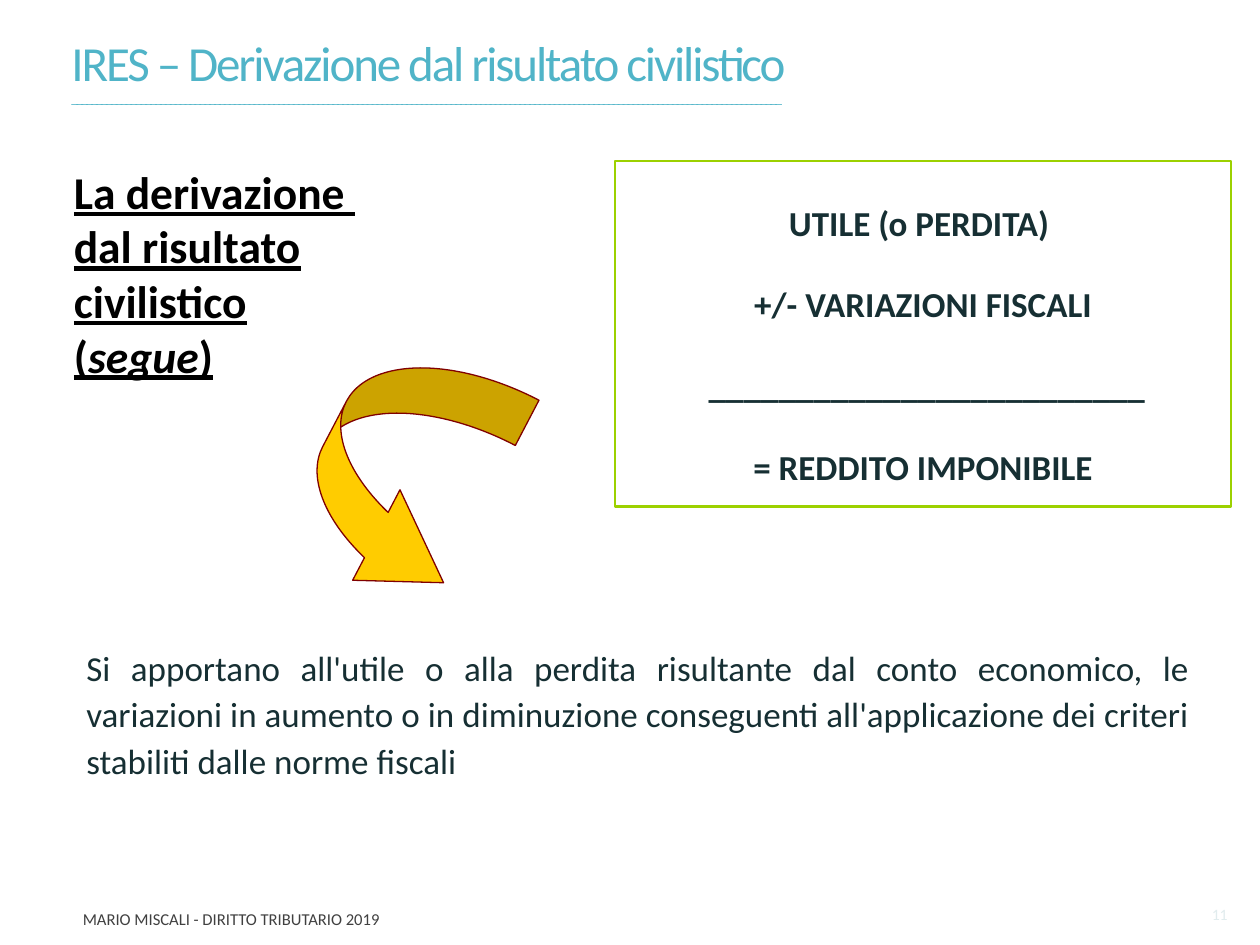
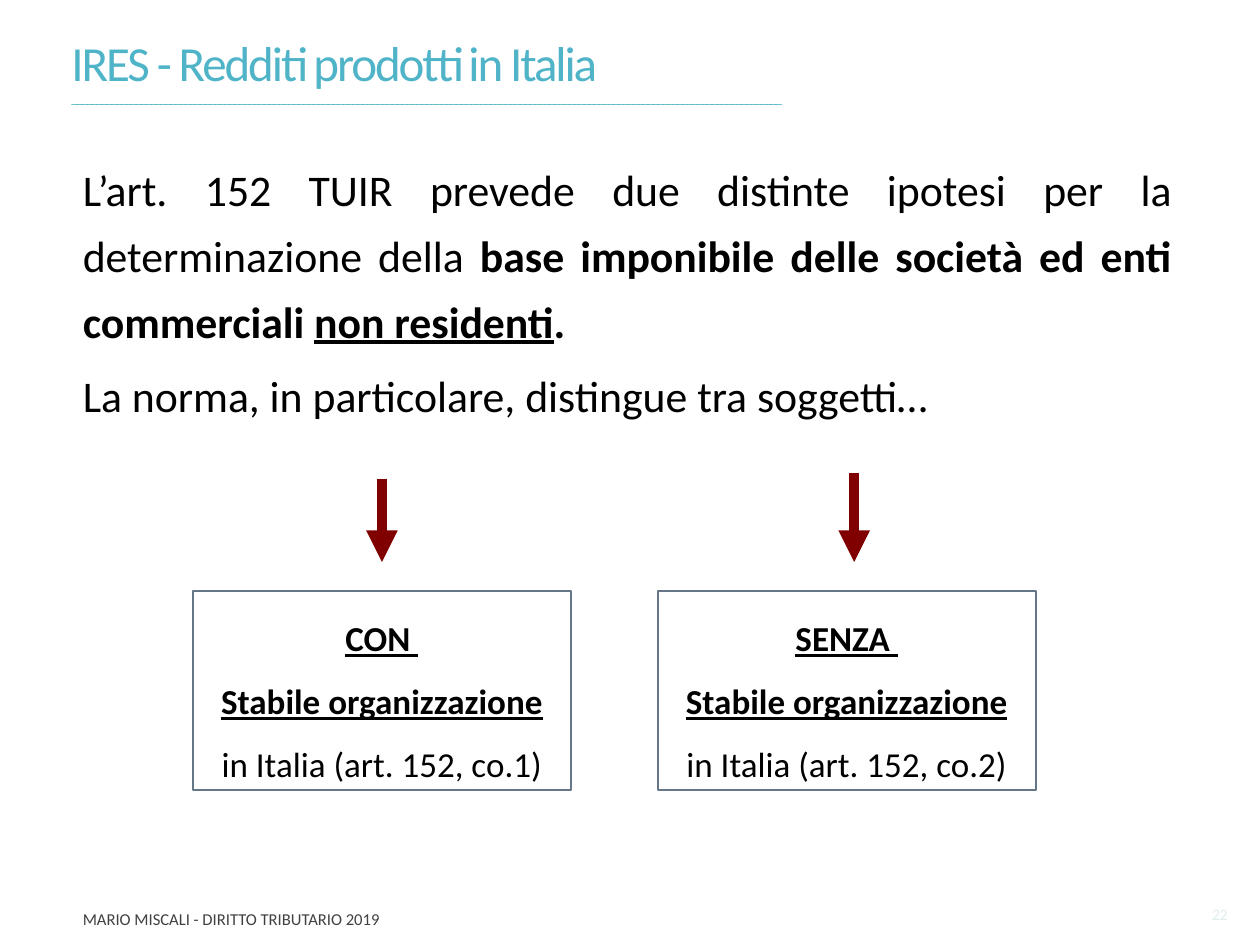
from lxml.etree import SubElement
from pptx import Presentation
from pptx.dml.color import RGBColor
from pptx.enum.shapes import MSO_CONNECTOR as CONNECTOR, MSO_SHAPE as SHAPE
from pptx.enum.text import MSO_ANCHOR as ANCHOR, PP_ALIGN as ALIGN
from pptx.oxml.ns import qn
from pptx.util import Cm, Pt

FONT = "Calibri"
COLOURS = {
    "title": "50B4C8",
    "text": "000000",
    "slate": "162F33",
    "footer": "404040",
    "number": "E1ECEE",
    "green": "9CD100",
    "yellow": "FFCC00",
    "maroon": "800000",
    "frame": "657689",
    "white": "FFFFFF",
}
FOOTER = "MARIO MISCALI - DIRITTO TRIBUTARIO 2019"
TITLE_RULE = "_" * 144


def colour(name):
    return RGBColor.from_string(COLOURS[name])


def box_of(left, top, width, height):
    return Cm(left), Cm(top), Cm(width), Cm(height)


def write(shape, paragraphs, size, ink="text", align=ALIGN.LEFT, spacing=1.0,
          before=0, anchor=ANCHOR.TOP, wrap=True):
    """Each paragraph is a list of (text, style) runs; style holds letters b, i, u."""
    frame = shape.text_frame
    frame.word_wrap = wrap
    frame.vertical_anchor = anchor
    for index, runs in enumerate(paragraphs):
        paragraph = frame.add_paragraph() if index else frame.paragraphs[0]
        paragraph.alignment = align
        paragraph.line_spacing = spacing
        paragraph.space_before = Pt(before if index else 0)
        font = paragraph.font
        font.name, font.size = FONT, Pt(size)
        font.color.rgb = colour(ink)
        for text, style in runs:
            run = paragraph.add_run()
            run.text = text
            run.font.bold = "b" in style
            run.font.italic = "i" in style
            run.font.underline = "u" in style


def add_text(slide, box, paragraphs, size, **options):
    shape = slide.shapes.add_textbox(*box_of(*box))
    write(shape, paragraphs, size, **options)
    return shape


def add_figure(slide, kind, box, line, width, fill=None):
    shape = slide.shapes.add_shape(kind, *box_of(*box))
    shape.shadow.inherit = False
    if fill:
        shape.fill.solid()
        shape.fill.fore_color.rgb = colour(fill)
    else:
        shape.fill.background()
    shape.line.color.rgb = colour(line)
    shape.line.width = Pt(width)
    return shape


def add_panel(slide, box, paragraphs, line, width, fill=None, **options):
    panel = add_figure(slide, SHAPE.RECTANGLE, box, line, width, fill)
    write(panel, paragraphs, 20, align=ALIGN.CENTER, spacing=1.5,
          anchor=ANCHOR.MIDDLE, wrap=False, **options)


def add_down_arrow(slide, x, top, bottom):
    arrow = slide.shapes.add_connector(
        CONNECTOR.STRAIGHT, Cm(x), Cm(top), Cm(x), Cm(bottom))
    arrow.line.color.rgb = colour("maroon")
    arrow.line.width = Pt(6)
    SubElement(arrow.line._get_or_add_ln(), qn("a:tailEnd"), type="triangle")
    SubElement(arrow._element.spPr, qn("a:effectLst"))


def add_title(slide, title):
    shape = slide.shapes.add_textbox(*box_of(1.19, 0.66, 22.45, 3.07))
    shape.text_frame.word_wrap = True
    paragraph = shape.text_frame.paragraphs[0]
    paragraph.line_spacing = 0.9
    paragraph.font.name = FONT
    paragraph.font.color.rgb = colour("title")
    for text, size in ((title, 28), (TITLE_RULE, 8)):
        if paragraph.runs:
            paragraph.add_line_break()
        run = paragraph.add_run()
        run.text = text
        run.font.size = Pt(size)
        run._r.get_or_add_rPr().set("spc", "-120")


def start_slide(presentation, title, number):
    slide = presentation.slides.add_slide(presentation.slide_layouts[6])
    add_title(slide, title)
    add_text(slide, (1.42, 18.21, 10.46, 0.64), [[(FOOTER, "")]], 9.5,
             ink="footer", anchor=ANCHOR.MIDDLE)
    add_text(slide, (23, 18.12, 2, 0.64), [[(str(number), "")]], 9,
             ink="number", align=ALIGN.RIGHT, anchor=ANCHOR.MIDDLE)
    return slide


def build_derivation(presentation):
    slide = start_slide(presentation, "IRES – Derivazione dal risultato civilistico", 11)
    add_text(slide, (1.24, 3.18, 8.31, 3.58), [
        [("La derivazione ", "bu")],
        [("dal risultato civilistico", "bu")],
        [("(", "bu"), ("segue", "biu"), (")", "bu")],
    ], 26)
    formula = ("UTILE (o PERDITA) ", "+/- VARIAZIONI FISCALI",
               " " + "_" * 25, "= REDDITO IMPONIBILE")
    add_panel(slide, (12.4, 3.25, 12.42, 6.96), [[(line, "b")] for line in formula],
              "green", 1.5, ink="slate", before=10.5)
    arrow = add_figure(slide, SHAPE.CURVED_RIGHT_ARROW, (6.43, 6.98, 3.43, 5.18),
                       "maroon", 0.75, "yellow")
    arrow.rotation = 27.6
    for index, value in enumerate((0.3, 0.6, 0.48)):
        arrow.adjustments[index] = value
    add_text(slide, (1.49, 12.83, 22.74, 3.56), [[(
        "Si apportano all'utile o alla perdita risultante dal conto economico, "
        "le variazioni in aumento o in diminuzione conseguenti all'applicazione "
        "dei criteri stabiliti dalle norme fiscali", "")]],
        20, ink="slate", align=ALIGN.JUSTIFY, spacing=1.1)


def build_foreign_income(presentation):
    slide = start_slide(presentation, "IRES - Redditi prodotti in Italia", 22)
    add_text(slide, (1.42, 2.9, 22.45, 6.48), [
        [("L’art. 152 TUIR prevede due distinte ipotesi per la determinazione della ", ""),
         ("base imponibile delle società ed enti commerciali ", "b"),
         ("non residenti", "bu"), (".", "b")],
        [("La norma, in particolare, distingue tra soggetti…", "")],
    ], 25, align=ALIGN.JUSTIFY, spacing=1.25, before=5)
    cases = (("CON ", 1, 3.89, 7.7, 9.65), ("SENZA ", 2, 13.26, 17.22, 9.53))
    for word, comma, left, arrow_x, arrow_top in cases:
        add_panel(slide, (left, 11.91, 7.62, 4.01), [
            [(word, "bu")],
            [("Stabile organizzazione", "bu")],
            [(f"in Italia (art. 152, co.{comma})", "")],
        ], "frame", 1, "white")
        add_down_arrow(slide, arrow_x, arrow_top, 11.33)


def main():
    presentation = Presentation()
    presentation.slide_width, presentation.slide_height = Cm(25.4), Cm(19.05)
    build_derivation(presentation)
    build_foreign_income(presentation)
    presentation.save("out.pptx")


if __name__ == "__main__":
    main()
